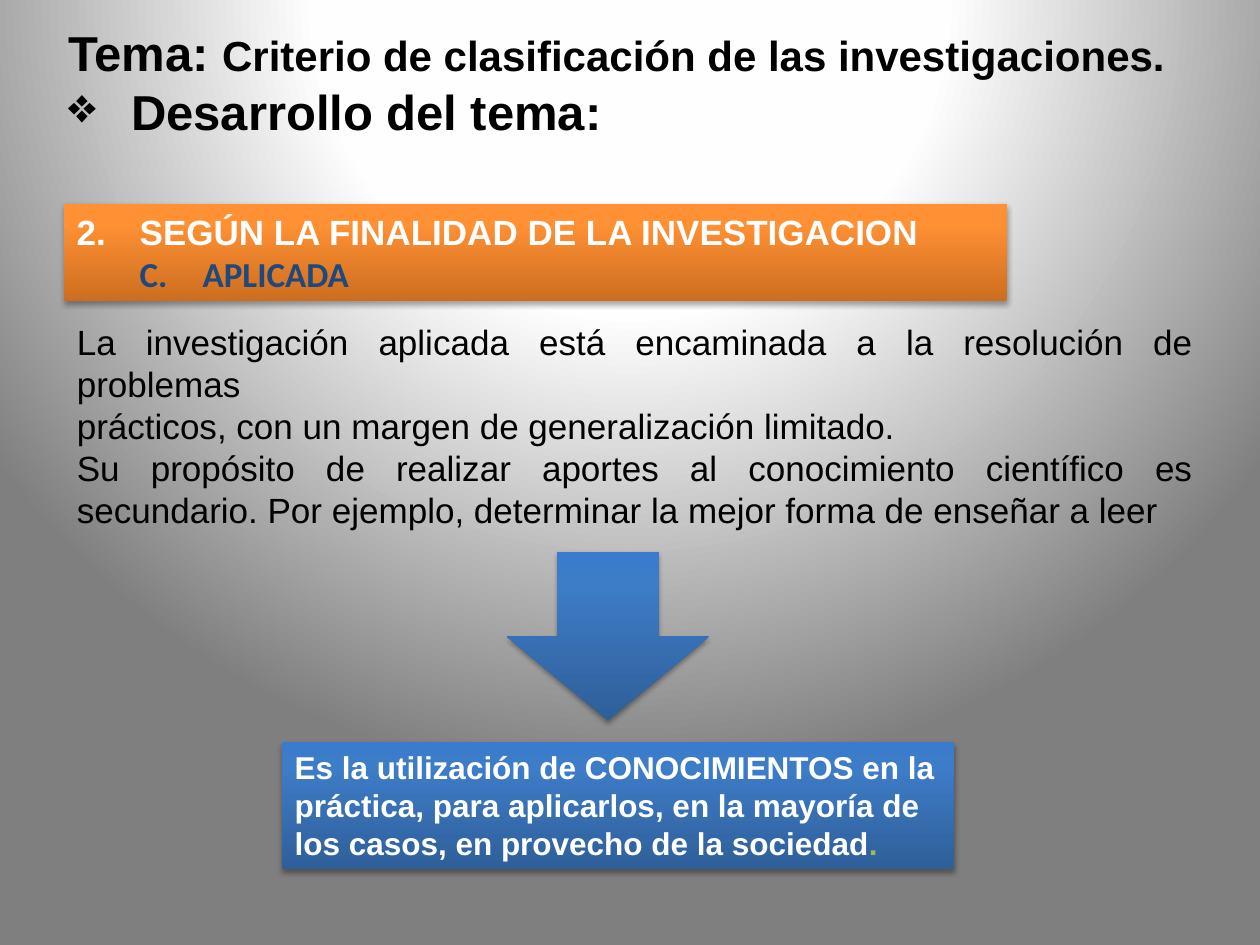
from lxml import etree
from pptx import Presentation
from pptx import util as u
from pptx.dml import color
from pptx.enum import shapes, text
from pptx.oxml import ns

ORANGE = [(0, "CC6E20"), (80, "FF9034"), (100, "FF9136")]
BLUE = [(0, "2F5F99"), (80, "3D7CC7"), (100, "3A7CCB")]
GREY = [(0, "FFFFFF"), (40, "FEFEFE"), (100, "7F7F7F")]
JUSTIFY = text.PP_ALIGN.JUSTIFY


def rgb(value):
    return color.RGBColor.from_string(value)


def add(parent, tag, **attributes):
    child = etree.SubElement(parent, ns.qn(tag))
    for name, value in attributes.items():
        child.set(name, str(value))
    return child


class SlideBuilder:
    """Holds the style and the current slide, and adds each kind of element."""

    font = "Arial"

    def __init__(self, deck):
        self.page = deck.slides.add_slide(deck.slide_layouts[1])

    def gradient(self, fill, owner, stops, circular=False):
        fill.gradient()
        grad = owner.find(".//" + ns.qn("a:gradFill"))
        for child in list(grad):
            grad.remove(child)
        grad.set("rotWithShape", "1")
        stop_list = add(grad, "a:gsLst")
        for position, value in stops:
            stop = add(stop_list, "a:gs", pos=position * 1000)
            add(stop, "a:srgbClr", val=value)
        if circular:
            circle = add(grad, "a:path", path="circle")
            add(circle, "a:fillToRect", l=50000, t=-80000, r=50000, b=180000)
        else:
            add(grad, "a:lin", ang=270 * 60000, scaled=0)

    def background(self, stops):
        self.gradient(self.page.background.fill, self.page.element, stops, circular=True)

    def placeholder(self, index, left, top, width, height):
        box = self.page.placeholders[index]
        box.left, box.top = u.Inches(left), u.Inches(top)
        box.width, box.height = u.Inches(width), u.Inches(height)
        return self.prepare(box)

    def shape(self, kind, left, top, width, height, stops):
        box = self.page.shapes.add_shape(
            kind, u.Inches(left), u.Inches(top), u.Inches(width), u.Inches(height))
        self.gradient(box.fill, box.element.spPr, stops)
        box.line.fill.background()
        box.shadow.inherit = False
        effects = box.element.spPr.find(ns.qn("a:effectLst"))
        shadow = add(effects, "a:outerShdw", blurRad=u.Pt(3.1), dist=u.Pt(1.8),
                     dir=90 * 60000, rotWithShape=0)
        add(add(shadow, "a:srgbClr", val="000000"), "a:alpha", val=35000)
        return self.prepare(box)

    def prepare(self, box):
        frame = box.text_frame
        frame.word_wrap = True
        frame.auto_size = text.MSO_AUTO_SIZE.NONE
        frame.vertical_anchor = text.MSO_ANCHOR.TOP
        return box

    def paragraph(self, box, spans, size, ink, bold=True, font=None,
                  align=text.PP_ALIGN.LEFT, level=0, indent=0, bullet=None):
        frame = box.text_frame
        para = frame.paragraphs[0] if not frame.text else frame.add_paragraph()
        para.alignment, para.level = align, level
        para.space_before = u.Pt(0)
        props = para._p.get_or_add_pPr()
        props.set("marL", str(u.Inches(indent)))
        props.set("indent", str(-u.Inches(0.5) if bullet else 0))
        tag, attributes = bullet or ("a:buNone", {})
        add(props, tag, **attributes)
        para.font.size, para.font.bold = u.Pt(size), bold
        para.font.name = font or self.font
        para.font.color.rgb = rgb(ink)
        for words in spans:
            span = para.add_run()
            span.text = words
        return para


def main():
    deck = Presentation()
    deck.slide_width, deck.slide_height = u.Inches(10), u.Inches(7.5)
    slide = SlideBuilder(deck)
    slide.background(GREY)

    title = slide.placeholder(0, 0.44, 0.13, 9.36, 1.04)
    topic = slide.paragraph(
        title, ["Tema: ", "Criterio de clasificación de las investigaciones."], 28, "000000")
    topic.runs[1].font.size = u.Pt(24)
    slide.paragraph(title, ["Desarrollo del tema:"], 28, "000000",
                    indent=0.5, bullet=("a:buChar", {"char": "❖"}))

    heading = slide.shape(shapes.MSO_SHAPE.RECTANGLE, 0.51, 1.62, 7.48, 0.77, ORANGE)
    slide.paragraph(heading, ["SEGÚN LA FINALIDAD DE LA INVESTIGACION"], 20, "FFFFFF", indent=0.5,
                    bullet=("a:buAutoNum", {"type": "arabicPeriod", "startAt": 2}))
    slide.paragraph(heading, ["APLICADA"], 20, "1F497D", font="Calibri", level=1, indent=1,
                    bullet=("a:buAutoNum", {"type": "alphaUcPeriod", "startAt": 3}))

    body = slide.placeholder(1, 0.51, 2.49, 9.06, 2.12)
    for words in (
        "La investigación aplicada está encaminada a la resolución de problemas",
        "prácticos, con un margen de generalización limitado.",
        "Su propósito de realizar aportes al conocimiento científico es secundario. "
        "Por ejemplo, determinar la mejor forma de enseñar a leer",
    ):
        slide.paragraph(body, [words], 20, "000000", bold=False, align=JUSTIFY)

    summary = slide.shape(shapes.MSO_SHAPE.RECTANGLE, 2.24, 5.89, 5.33, 1.01, BLUE)
    summary.text_frame.word_wrap = False
    for spans in (
        ["Es la utilización de CONOCIMIENTOS en la"],
        ["práctica, para aplicarlos, en la mayoría de"],
        ["los casos, en provecho de la sociedad", "."],
    ):
        closing = slide.paragraph(summary, spans, 18, "FFFFFF", align=JUSTIFY)
    closing.runs[1].font.color.rgb = rgb("9BBB59")

    slide.shape(shapes.MSO_SHAPE.DOWN_ARROW, 4.02, 4.38, 1.61, 1.34, BLUE)
    deck.save("out.pptx")


if __name__ == "__main__":
    main()
